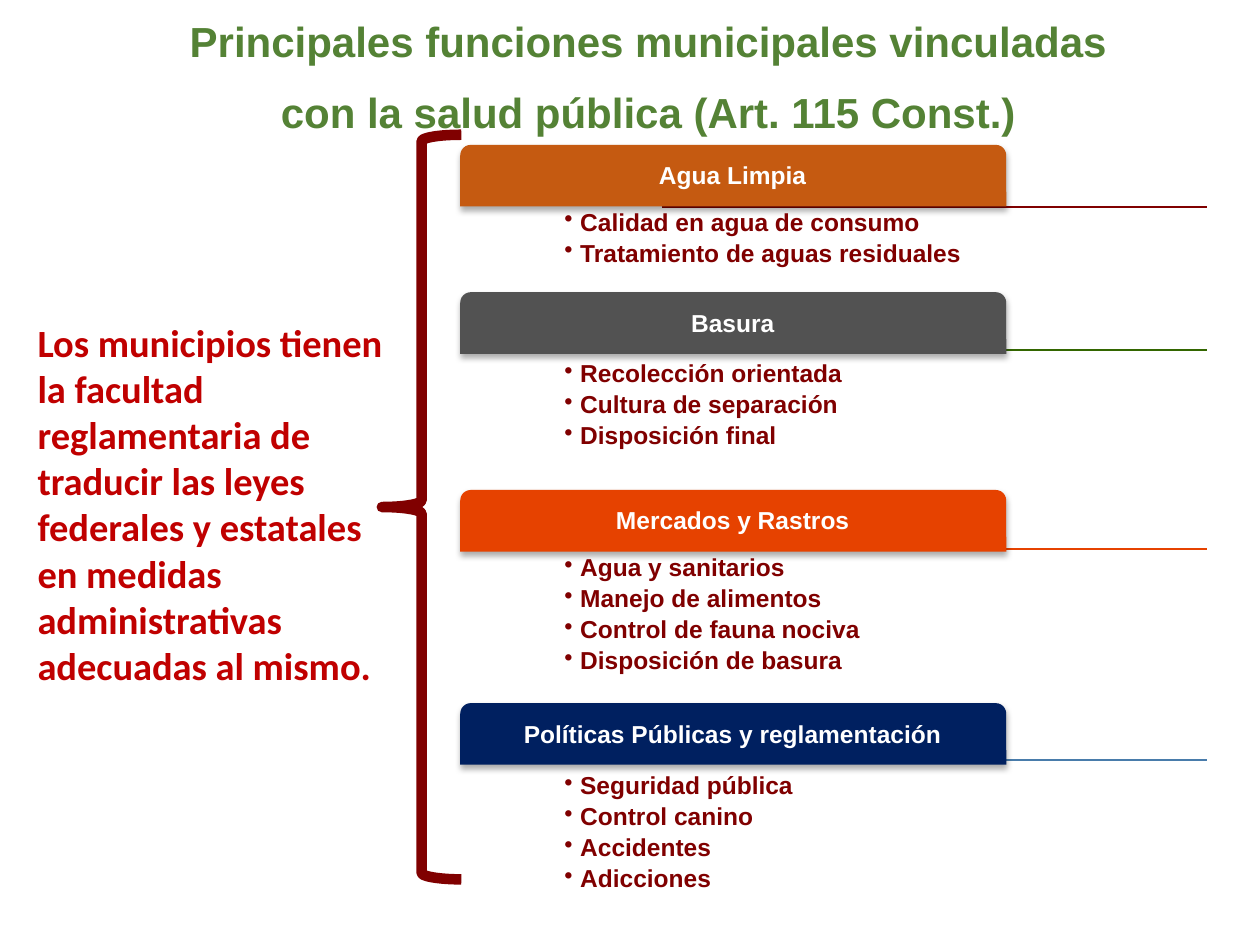
from lxml.etree import SubElement
from pptx import Presentation
from pptx.dml.color import RGBColor
from pptx.enum.shapes import MSO_CONNECTOR, MSO_SHAPE
from pptx.enum.text import MSO_ANCHOR, PP_ALIGN
from pptx.oxml import parse_xml
from pptx.oxml.ns import nsdecls, qn
from pptx.util import Pt

WHITE = RGBColor(0xFF, 0xFF, 0xFF)
GREEN = RGBColor(0x54, 0x82, 0x35)
RED = RGBColor(0xC0, 0x00, 0x00)
MAROON = RGBColor(0x80, 0x00, 0x00)
ORANGE = RGBColor(0xC5, 0x5A, 0x11)
GREY = RGBColor(0x52, 0x52, 0x52)
VERMILION = RGBColor(0xE6, 0x42, 0x00)
NAVY = RGBColor(0x00, 0x20, 0x60)
FOREST = RGBColor(0x33, 0x66, 0x00)
BLUE = RGBColor(0x49, 0x7C, 0xAB)

BAR_LEFT, BAR_WIDTH, BAR_HEIGHT = 263, 312, 35.2
RULE_LEFT, RULE_RIGHT = 378, 689.8

# Each entry: title, bar colour, bar top, rule colour, rule top, list top, list height, items
FUNCTIONS = [
    ("Agua Limpia", ORANGE, 82.8, MAROON, 118.1, 118.1, 70.6,
     ["Calidad en agua de consumo", "Tratamiento de aguas residuales"]),
    ("Basura", GREY, 167, FOREST, 200.2, 204.5, 70.6,
     ["Recolección orientada", "Cultura de separación", "Disposición final"]),
    ("Mercados y Rastros", VERMILION, 280, VERMILION, 313.9, 315.4, 87.8,
     ["Agua y sanitarios", "Manejo de alimentos", "Control de fauna nociva",
      "Disposición de basura"]),
    ("Políticas Públicas y reglamentación", NAVY, 401.8, BLUE, 434.2, 440, 84.2,
     ["Seguridad pública", "Control canino", "Accidentes", "Adicciones"]),
]


def apply(target, formats):
    for name, value in formats.items():
        setattr(target, name, value)


def shadow_xml(blur, distance, angle, alpha):
    return (f'<a:outerShdw {nsdecls("a")} blurRad="{Pt(blur)}" dist="{Pt(distance)}" '
            f'dir="{angle * 60000}" algn="ctr" rotWithShape="0"><a:srgbClr val="000000">'
            f'<a:alpha val="{alpha * 1000}"/></a:srgbClr></a:outerShdw>')


class SlideBuilder:
    """Holds the text style and the current page, and draws each kind of element."""

    def __init__(self, page, font):
        self.page = page
        self.font = font

    def text(self, place, lines, size, color, inset=(7.2, 3.6), font=None, frame=None,
             para_format=None, gap=0, indent=0, bullet=False, shadow=False):
        box = self.page.shapes.add_textbox(*map(Pt, place))
        side, edge = map(Pt, inset)
        apply(box.text_frame, {"word_wrap": True, "margin_left": side, "margin_right": side,
                               "margin_top": edge, "margin_bottom": edge, **(frame or {})})
        for index, line in enumerate(lines):
            para = box.text_frame.add_paragraph() if index else box.text_frame.paragraphs[0]
            apply(para, para_format or {})
            if index and gap:
                para.space_before = Pt(gap)
            if indent:
                para._p.get_or_add_pPr().set("marL", str(Pt(indent)))
            if bullet:
                self.bullet(para, indent)
            span = para.add_run()
            span.text = line
            apply(span.font, {"name": font or self.font, "size": Pt(size), "bold": True})
            span.font.color.rgb = color
            if shadow:
                effects = parse_xml(f'<a:effectLst {nsdecls("a")}/>')
                effects.append(parse_xml(shadow_xml(0, 1.5, 45, 60)))
                span._r.rPr.find(qn("a:solidFill")).addnext(effects)

    def bullet(self, para, indent):
        properties = para._p.get_or_add_pPr()
        properties.set("indent", str(-Pt(indent)))
        SubElement(properties, qn("a:buChar")).set("char", "•")

    def bar(self, top, color):
        bar = self.page.shapes.add_shape(MSO_SHAPE.ROUND_2_SAME_RECTANGLE, Pt(BAR_LEFT),
                                         Pt(top), Pt(BAR_WIDTH), Pt(BAR_HEIGHT))
        bar.adjustments[0] = 0.17
        bar.fill.solid()
        bar.fill.fore_color.rgb = color
        bar.line.fill.background()
        bar.shadow.inherit = False
        bar._element.spPr.find(qn("a:effectLst")).append(parse_xml(shadow_xml(3.5, 2.2, 90, 32)))

    def rule(self, top, color):
        rule = self.page.shapes.add_connector(MSO_CONNECTOR.STRAIGHT, Pt(RULE_LEFT), Pt(top),
                                              Pt(RULE_RIGHT), Pt(top))
        rule.line.color.rgb = color
        rule.line.width = Pt(1)
        SubElement(rule._element.spPr, qn("a:effectLst"))

    def brace(self, place, color, width):
        brace = self.page.shapes.add_shape(MSO_SHAPE.LEFT_BRACE, *map(Pt, place))
        brace.fill.background()
        brace.line.color.rgb = color
        brace.line.width = Pt(width)
        brace.shadow.inherit = False


def main():
    deck = Presentation()
    apply(deck, {"slide_width": Pt(720), "slide_height": Pt(540)})
    builder = SlideBuilder(deck.slides.add_slide(deck.slide_layouts[6]), "Arial")
    middle = {"vertical_anchor": MSO_ANCHOR.MIDDLE}

    builder.text((14.4, 178.6, 220.3, 247),
                 ["Los municipios tienen la facultad reglamentaria de traducir las leyes "
                  "federales y estatales en medidas administrativas adecuadas al mismo."],
                 22, RED, font="Calibri")
    for _, _, _, rule_color, rule_top, *_ in reversed(FUNCTIONS):
        builder.rule(rule_top, rule_color)
    for title, color, top, _, _, list_top, list_height, items in FUNCTIONS:
        builder.bar(top, color)
        builder.text((BAR_LEFT + 1.5, top + 1.8, BAR_WIDTH - 3.6, 33), [title], 14, WHITE,
                     inset=(2.1, 2.1), frame=middle,
                     para_format={"alignment": PP_ALIGN.CENTER, "line_spacing": 0.9})
        builder.text((320.4, list_top, BAR_WIDTH, list_height), items, 14, MAROON,
                     inset=(2.1, 2.1), para_format={"level": 1, "line_spacing": 0.9},
                     gap=2.6, indent=9, bullet=True)
    builder.text((9.4, 2.2, 700.6, 80),
                 ["Principales funciones municipales vinculadas",
                  "con la salud pública (Art. 115 Const.)"],
                 24, GREEN, frame=middle, gap=8.6, indent=21.6, shadow=True,
                 para_format={"alignment": PP_ALIGN.CENTER, "line_spacing": 1.1})
    builder.brace((218.2, 77, 45.4, 425.5), MAROON, 6)
    deck.save("out.pptx")


if __name__ == "__main__":
    main()
